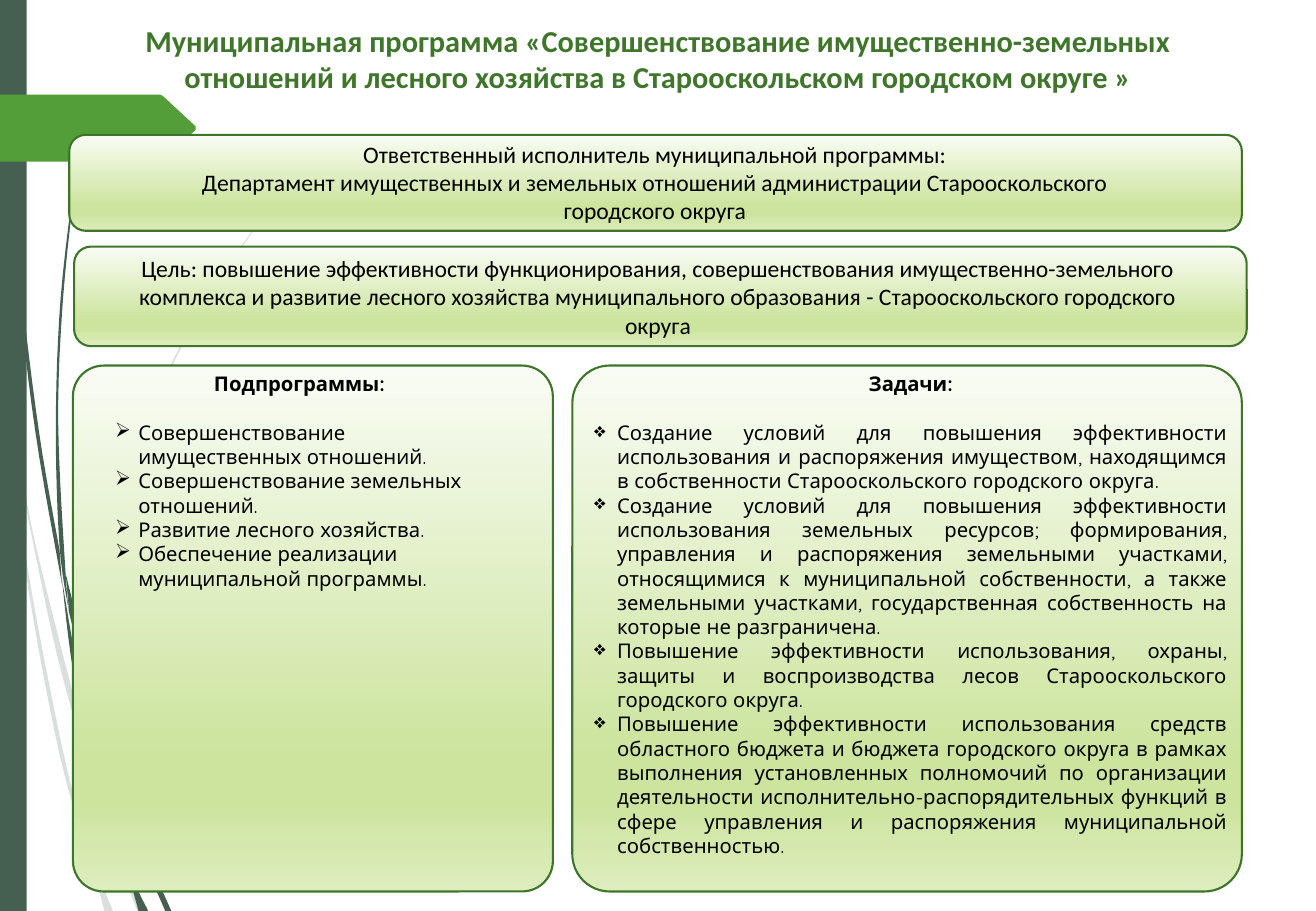
from copy import deepcopy
from dataclasses import dataclass
from lxml.etree import SubElement
from pptx import Presentation
from pptx.dml.color import RGBColor
from pptx.enum.shapes import MSO_SHAPE
from pptx.enum.text import MSO_ANCHOR, MSO_AUTO_SIZE, PP_ALIGN
from pptx.oxml.ns import qn
from pptx.util import Inches, Pt


@dataclass(frozen=True)
class Theme:
    dark: str = "455F51"
    arrow: str = "549E39"
    title: str = "3F762B"
    border: str = "3E752A"
    ink: str = "000000"
    gradient: tuple = ((0, "F9FCF4"), (0.74, "CCE49E"), (0.83, "CCE49E"), (1, "DDEDBE"))
    main_font: str = "Calibri"
    list_font: str = "Quicksand"
    title_size: int = 18
    body_size: int = 14
    list_size: int = 12
    list_gap: float = 14.4
    border_width: float = 1.25


THEME = Theme()

# Content
TITLE = ("Муниципальная программа «Совершенствование имущественно-земельных отношений "
         "и лесного хозяйства в Старооскольском городском округе »")
EXECUTOR = ["Ответственный исполнитель муниципальной программы:",
            "Департамент имущественных и земельных отношений администрации "
            "Старооскольского городского округа"]
GOAL = ["Цель: повышение эффективности функционирования, совершенствования "
        "имущественно-земельного комплекса и развитие лесного хозяйства муниципального "
        "образования - Старооскольского городского округа"]
SUBPROGRAMS = ["Совершенствование имущественных отношений.",
               "Совершенствование земельных отношений.",
               "Развитие лесного хозяйства.",
               "Обеспечение реализации муниципальной программы."]
TASKS = [
    "Создание условий для повышения эффективности использования и распоряжения "
    "имуществом, находящимся в собственности Старооскольского городского округа.",
    "Создание условий для повышения эффективности использования земельных ресурсов; "
    "формирования, управления и распоряжения земельными участками, относящимися к "
    "муниципальной собственности, а также земельными участками, государственная "
    "собственность на которые не разграничена.",
    "Повышение эффективности использования, охраны, защиты и воспроизводства лесов "
    "Старооскольского городского округа.",
    "Повышение эффективности использования средств областного бюджета и бюджета "
    "городского округа в рамках выполнения установленных полномочий по организации "
    "деятельности исполнительно-распорядительных функций в сфере управления и "
    "распоряжения муниципальной собственностью.",
]

# Panels: (left, top, width, height), corner ratio
EXECUTOR_PANEL = ((0.57, 1.11, 9.65, 0.79), 0.17)
GOAL_PANEL = ((0.61, 2.03, 9.65, 0.82), 0.17)
LISTS = [  # panel, corner, text area, heading, bullet, alignment, items
    ((0.6, 3.01, 3.95, 4.33), 0.064, (0.85, 3.01, 3.23, 1.92),
     "Подпрограммы:", "➢", PP_ALIGN.LEFT, SUBPROGRAMS),
    ((4.71, 3.01, 5.51, 4.33), 0.071, (4.79, 3.01, 5.41, 3.53),
     "Задачи:", "❖", PP_ALIGN.JUSTIFY, TASKS),
]

# Grass blades: one edge downwards, then the other edge downwards
PALE_BLADES = [
    ([(0, 2.82), (0.06, 3.22), (0.08, 3.5)], [(0, 2.99), (0.08, 3.44)]),
    ([(0.11, 3.45), (0.26, 4.33), (0.47, 5.2), (0.64, 5.86)],
     [(0.13, 3.76), (0.43, 5.22), (0.63, 5.99)]),
    ([(0.66, 5.96), (0.96, 6.92), (1.17, 7.5)], [(0.66, 6.1), (0.92, 6.94), (1.13, 7.5)]),
    ([(0.08, 3.5), (0.23, 4.69), (0.52, 6.19), (0.76, 7.14)],
     [(0.08, 3.5), (0.21, 4.7), (0.49, 6.21), (0.76, 7.14)]),
    ([(0.63, 5.99), (0.68, 6.46), (0.79, 7.11), (0.93, 7.5)],
     [(0.63, 5.99), (0.7, 6.83), (0.86, 7.5)]),
    ([(2.35, 1.53), (1.72, 2.45), (1.2, 3.49), (0.83, 4.62), (0.66, 5.96)],
     [(2.35, 1.53), (1.71, 2.44), (1.19, 3.48), (0.81, 4.61), (0.64, 5.86)]),
]
DARK_BLADES = [
    ([(0.03, 0), (0.07, 1.09), (0.17, 2.32), (0.32, 3.55), (0.49, 4.53)],
     [(0.02, 0), (0.06, 1.1), (0.15, 2.33), (0.29, 3.55), (0.51, 4.81)]),
    ([(0.54, 4.72), (0.83, 5.9), (0.95, 6.33)], [(0.57, 5.05), (0.79, 5.92), (0.95, 6.45)]),
    ([(0.99, 6.41), (1.22, 7.06), (1.41, 7.5)], [(0.99, 6.56), (1.18, 7.08), (1.36, 7.5)]),
    ([(0.51, 4.77), (0.65, 5.56), (0.88, 6.57), (1.05, 7.22)],
     [(0.51, 4.77), (0.61, 5.57), (0.83, 6.59), (1.05, 7.22)]),
    ([(0.63, 1.41), (0.52, 2.45), (0.48, 3.49), (0.54, 4.72), (0.57, 5.05)],
     [(0.62, 1.41), (0.5, 2.45), (0.46, 3.49), (0.49, 4.49), (0.57, 5.05)]),
    ([(0.95, 6.45), (0.99, 6.56), (1.09, 7.19), (1.22, 7.5)],
     [(0.95, 6.45), (0.99, 6.91), (1.14, 7.5)]),
    ([(2.34, 3.44), (1.83, 4.06), (1.42, 4.76), (1.12, 5.52), (0.99, 6.41)],
     [(2.33, 3.44), (1.82, 4.05), (1.4, 4.74), (1.09, 5.51), (0.95, 6.31)]),
]
ARROW = [(0, 0.78), (1.32, 0.78), (1.34, 0.79), (1.61, 1.04), (1.61, 1.07),
         (1.34, 1.32), (1.32, 1.33), (0, 1.33)]

deck = Presentation()
deck.slide_width, deck.slide_height = Inches(10.83), Inches(7.5)
page = deck.slides.add_slide(deck.slide_layouts[6])


def smooth(points, steps=6):
    """Catmull-Rom curve through the points."""
    padded = [points[0], *points, points[-1]]
    curve = []
    for a, b, c, d in zip(padded, padded[1:], padded[2:], padded[3:]):
        for step in range(steps):
            t = step / steps
            curve.append(tuple(
                (2 * q + (r - p) * t + (2 * p - 5 * q + 4 * r - s) * t ** 2
                 + (3 * q - p - 3 * r + s) * t ** 3) / 2
                for p, q, r, s in zip(a, b, c, d)))
    return curve + [points[-1]]


def paint(shape, color, alpha=None):
    shape.shadow.inherit = False
    shape.fill.solid()
    shape.fill.fore_color.rgb = RGBColor.from_string(color)
    shape.line.fill.background()
    if alpha is not None:
        tint = shape._element.spPr.find(qn("a:solidFill"))[0]
        SubElement(tint, qn("a:alpha")).set("val", str(alpha * 1000))


def add_outline(points, color, alpha=None):
    corners = [(Inches(x), Inches(y)) for x, y in points]
    builder = page.shapes.build_freeform(*corners[0])
    builder.add_line_segments(corners[1:], close=True)
    paint(builder.convert_to_shape(), color, alpha)


def add_panel(area, corner):
    panel = page.shapes.add_shape(MSO_SHAPE.ROUNDED_RECTANGLE, *map(Inches, area))
    panel.adjustments[0] = corner
    panel.shadow.inherit = False
    panel.fill.gradient()
    panel.fill.gradient_angle = 270
    stops = panel._element.spPr.find(qn("a:gradFill")).find(qn("a:gsLst"))
    while len(stops) < len(THEME.gradient):
        stops.append(deepcopy(stops[0]))
    for stop, (position, color) in zip(panel.fill.gradient_stops, THEME.gradient):
        stop.position = position
        stop.color.rgb = RGBColor.from_string(color)
    panel.line.color.rgb = RGBColor.from_string(THEME.border)
    panel.line.width = Pt(THEME.border_width)


def add_text(area):
    frame = page.shapes.add_textbox(*map(Inches, area)).text_frame
    frame.word_wrap = True
    frame.auto_size = MSO_AUTO_SIZE.SHAPE_TO_FIT_TEXT
    frame.vertical_anchor = MSO_ANCHOR.TOP
    return frame


def add_para(frame, text, size, font, color=THEME.ink, bold=False,
             align=PP_ALIGN.CENTER, bullet=None):
    para = frame.paragraphs[0]
    if para.runs:
        para = frame.add_paragraph()
    para.alignment = align
    if bullet:
        props = para._p.get_or_add_pPr()
        props.set("marL", str(Inches(0.19)))
        props.set("indent", str(-Inches(0.19)))
        SubElement(props, qn("a:buChar")).set("char", bullet)
    span = para.add_run()
    span.text = text
    span.font.size, span.font.name, span.font.bold = Pt(size), font, bold
    span.font.color.rgb = RGBColor.from_string(color)
    return para


# Backdrop
for blades, alpha in ((PALE_BLADES, 20), (DARK_BLADES, None)):
    for near, far in blades:
        add_outline(smooth(near) + smooth(far)[::-1], THEME.dark, alpha)
stripe = page.shapes.add_shape(MSO_SHAPE.RECTANGLE, 0, 0, Inches(0.22), deck.slide_height)
paint(stripe, THEME.dark)
add_outline(ARROW, THEME.arrow)

# Title
add_para(add_text((0.61, 0.13, 9.61, 0.71)), TITLE, THEME.title_size,
         THEME.main_font, THEME.title, bold=True)

# Executor and goal
for panel, area, lines in ((EXECUTOR_PANEL, (1.43, 1.1, 7.92, 0.81), EXECUTOR),
                           (GOAL_PANEL, (0.77, 2.04, 9.29, 0.81), GOAL)):
    add_panel(*panel)
    frame = add_text(area)
    for line in lines:
        add_para(frame, line, THEME.body_size, THEME.main_font)

# Subprograms and tasks
for panel, corner, area, heading, bullet, align, items in LISTS:
    add_panel(panel, corner)
    frame = add_text(area)
    add_para(frame, heading, THEME.list_size, THEME.list_font, bold=True)
    for index, item in enumerate(items):
        para = add_para(frame, item, THEME.list_size, THEME.list_font,
                        align=align, bullet=bullet)
        if index == 0:
            para.space_before = Pt(THEME.list_gap)

deck.save("out.pptx")
